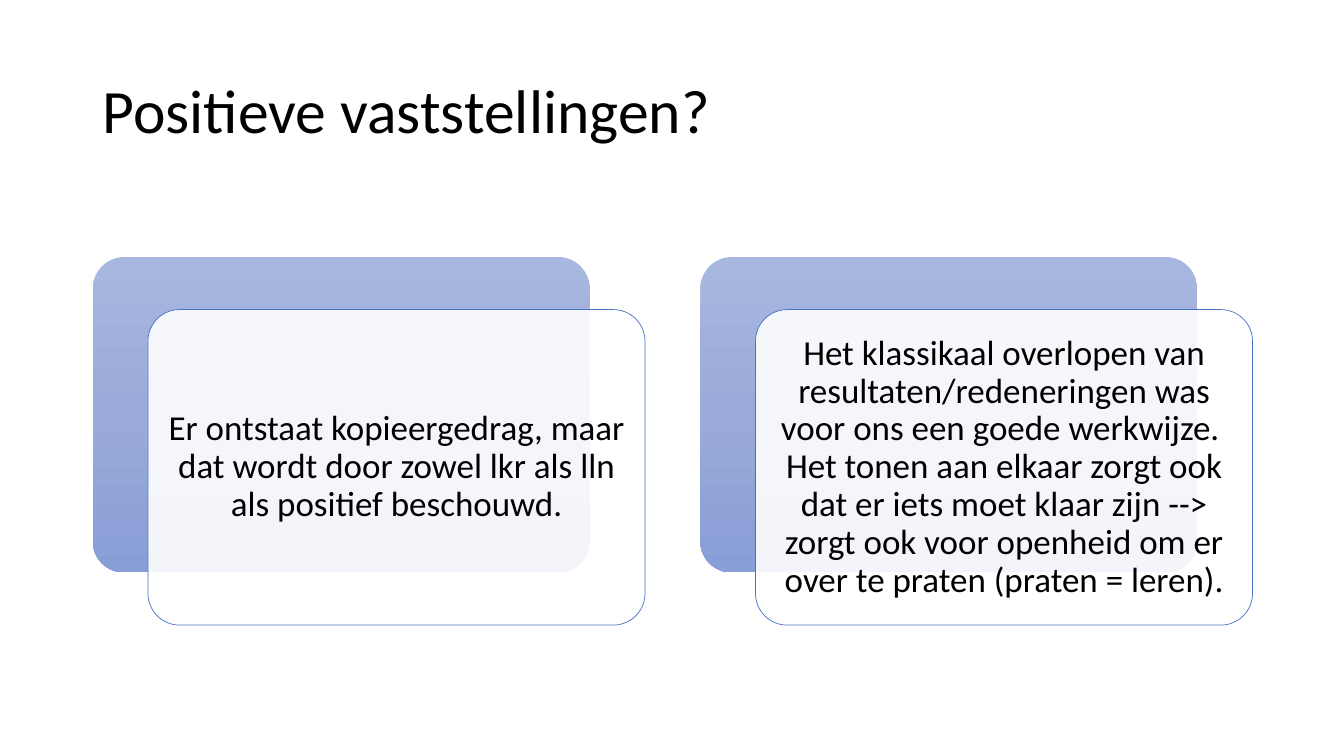
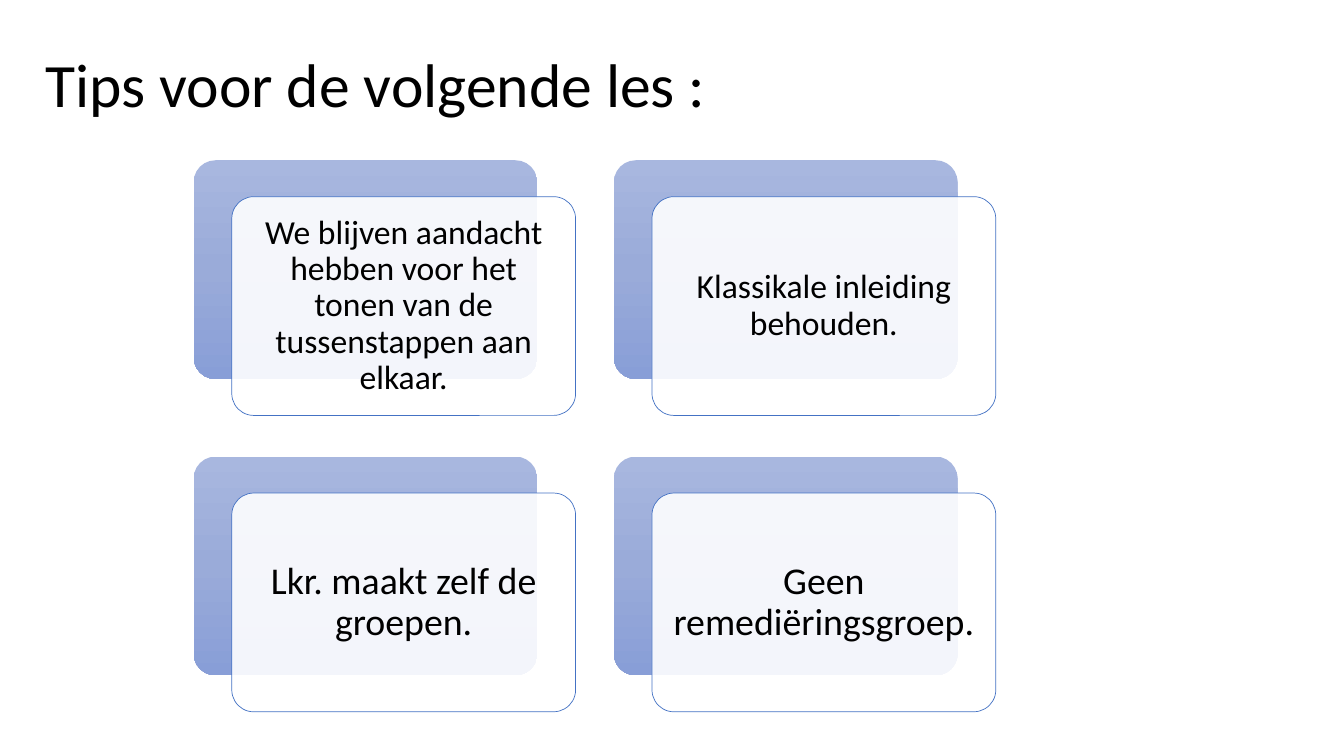
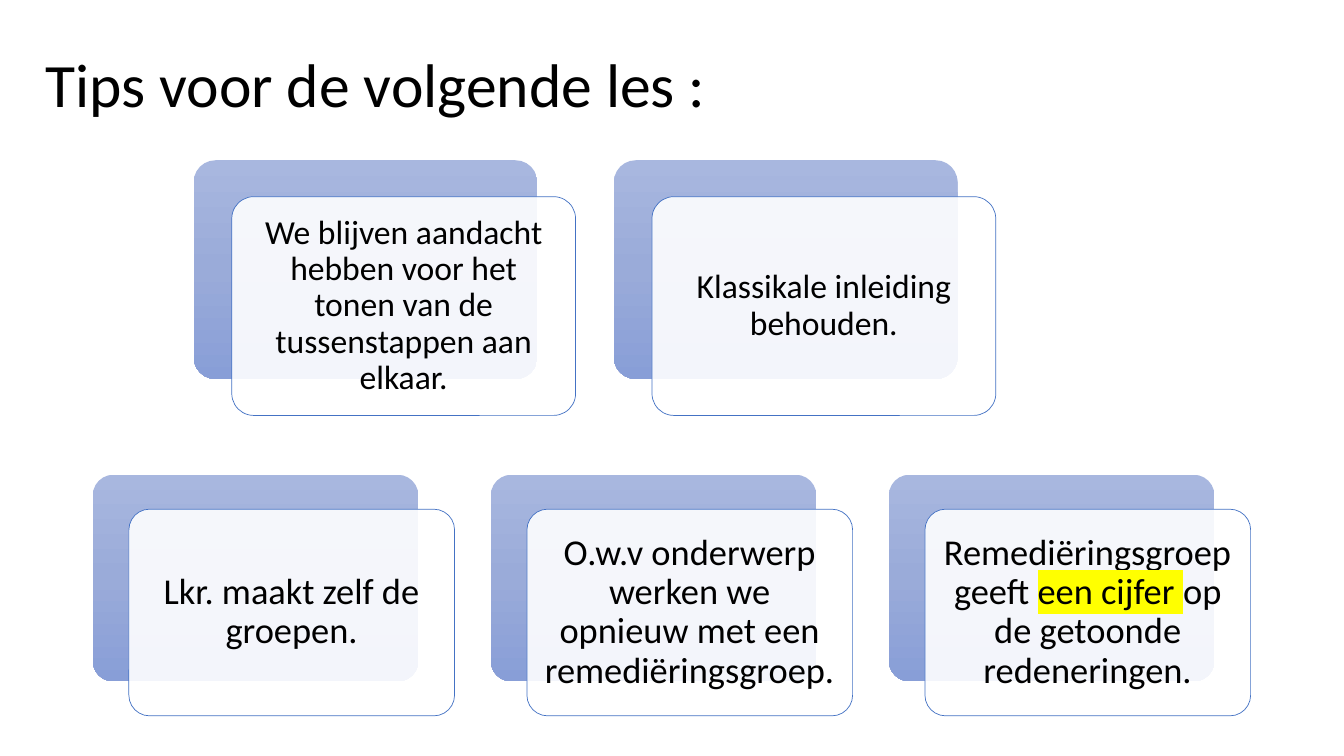
from copy import deepcopy
from dataclasses import dataclass
from typing import Any

from lxml import etree
from pptx import Presentation
from pptx import slide as s
from pptx import util as u
from pptx.dml import color as c
from pptx.enum import shapes, text
from pptx.oxml import ns
from pptx.shapes import autoshape as a

COLOURS = {
    "ink": "000000",
    "card": "FFFFFF",
    "card_line": "4472C4",
    "panel_top": "A8B7DF",
    "panel_middle": "9AABD9",
    "panel_bottom": "889ED7",
    "marker": "FFFF00",
}
PANEL_STOPS = {0: "panel_top", 0.5: "panel_middle", 1: "panel_bottom"}
FONT = "Calibri"
CARD_ALPHA = 90
CORNER = 0.1


@dataclass(frozen=True)
class Span:
    words: str
    marked: bool = False


@dataclass(frozen=True)
class CardRow:
    left: float
    top: float
    width: float
    height: float
    size: int
    cards: tuple[tuple[Span, ...], ...]


@dataclass(frozen=True)
class Page:
    title: str
    title_left: float
    title_top: float
    rows: tuple[CardRow, ...]


def apply_format(target: Any, values: dict[str, Any]) -> None:
    for name, value in values.items():
        setattr(target, name, value)


def rgb(name: str) -> c.RGBColor:
    return c.RGBColor.from_string(COLOURS[name])


def mark(font_element: Any) -> None:
    highlight = etree.Element(ns.qn("a:highlight"))
    etree.SubElement(highlight, ns.qn("a:srgbClr"), val=COLOURS["marker"])
    font_element.find(ns.qn("a:solidFill")).addnext(highlight)


def write(box: a.Shape, spans: tuple[Span, ...], size: int,
          align: text.PP_ALIGN, frame_format: dict[str, Any]) -> None:
    frame = box.text_frame
    apply_format(frame, {
        "word_wrap": True,
        "vertical_anchor": text.MSO_ANCHOR.MIDDLE,
        **frame_format,
    })
    para = frame.paragraphs[0]
    apply_format(para, {"alignment": align, "line_spacing": 0.9})
    for span in spans:
        run = para.add_run()
        run.text = span.words
        apply_format(run.font, {"name": FONT, "size": u.Pt(size)})
        run.font.color.rgb = rgb("ink")
        if span.marked:
            mark(run._r.get_or_add_rPr())


def add_title(slide: s.Slide, page: Page) -> None:
    box = slide.shapes.add_textbox(
        u.Inches(page.title_left), u.Inches(page.title_top),
        u.Inches(11.5), u.Inches(1.45))
    write(box, (Span(page.title),), 44, text.PP_ALIGN.LEFT, {})


def add_rounded(slide: s.Slide, left: float, top: float, row: CardRow) -> a.Shape:
    box = slide.shapes.add_shape(
        shapes.MSO_SHAPE.ROUNDED_RECTANGLE, u.Inches(left), u.Inches(top),
        u.Inches(row.width), u.Inches(row.height))
    box.adjustments[0] = CORNER
    box.shadow.inherit = False
    return box


def add_panel(slide: s.Slide, left: float, row: CardRow) -> None:
    panel = add_rounded(slide, left, row.top, row)
    panel.line.fill.background()
    panel.fill.gradient()
    panel.fill.gradient_angle = 270
    first_stop = next(panel._element.spPr.iter(ns.qn("a:gs")))
    first_stop.addnext(deepcopy(first_stop))
    for stop, (position, name) in zip(panel.fill.gradient_stops, PANEL_STOPS.items()):
        stop.position = position
        stop.color.rgb = rgb(name)


def add_card(slide: s.Slide, left: float, row: CardRow, spans: tuple[Span, ...]) -> None:
    card = add_rounded(slide, left + row.width / 9, row.top + row.height / 6, row)
    card.fill.solid()
    card.fill.fore_color.rgb = rgb("card")
    tint = next(card._element.spPr.iter(ns.qn("a:srgbClr")))
    etree.SubElement(tint, ns.qn("a:alpha"), val=str(CARD_ALPHA * 1000))
    card.line.color.rgb = rgb("card_line")
    card.line.width = u.Pt(0.5)
    inset = u.Inches(row.size / 240)
    margins = {f"margin_{side}": inset for side in ("left", "top", "right", "bottom")}
    write(card, spans, row.size, text.PP_ALIGN.CENTER, margins)


def add_row(slide: s.Slide, row: CardRow) -> None:
    pitch = row.width * 11 / 9
    for index, spans in enumerate(row.cards):
        left = row.left + index * pitch
        add_panel(slide, left, row)
        add_card(slide, left, row, spans)


TIPS_TITLE = "Tips voor de volgende les :"
GROUPS_TIP = (Span("Lkr. maakt zelf de groepen."),)
SHARED_TIPS = CardRow(1.92, 1.59, 3.41, 2.17, 24, (
    (Span("We blijven aandacht hebben voor het tonen van de tussenstappen aan elkaar."),),
    (Span("Klassikale inleiding behouden."),),
))

PAGES = (
    Page("Positieve vaststellingen?", 0.92, 0.4, (
        CardRow(0.92, 2.55, 4.93, 3.13, 25, (
            (Span("Er ontstaat kopieergedrag, maar dat wordt door zowel lkr als lln "
                  "als positief beschouwd."),),
            (Span("Het klassikaal overlopen van resultaten/redeneringen was voor ons "
                  "een goede werkwijze.  Het tonen aan elkaar zorgt ook dat er iets "
                  "moet klaar zijn --> zorgt ook voor openheid om er over te praten "
                  "(praten = leren)."),),
        )),
    )),
    Page(TIPS_TITLE, 0.35, 0.14, (
        SHARED_TIPS,
        CardRow(1.92, 4.53, 3.41, 2.17, 27, (
            GROUPS_TIP,
            (Span("Geen remediëringsgroep."),),
        )),
    )),
    Page(TIPS_TITLE, 0.35, 0.14, (
        SHARED_TIPS,
        CardRow(0.92, 4.71, 3.23, 2.05, 26, (
            GROUPS_TIP,
            (Span("O.w.v onderwerp werken we opnieuw met een remediëringsgroep."),),
            (Span("Remediëringsgroep geeft "), Span("een cijfer ", marked=True),
             Span("op de getoonde redeneringen.")),
        )),
    )),
)


def main() -> None:
    deck = Presentation()
    apply_format(deck, {"slide_width": u.Inches(13.33), "slide_height": u.Inches(7.5)})
    for page in PAGES:
        slide = deck.slides.add_slide(deck.slide_layouts[6])
        add_title(slide, page)
        for row in page.rows:
            add_row(slide, row)
    deck.save("out.pptx")


if __name__ == "__main__":
    main()
